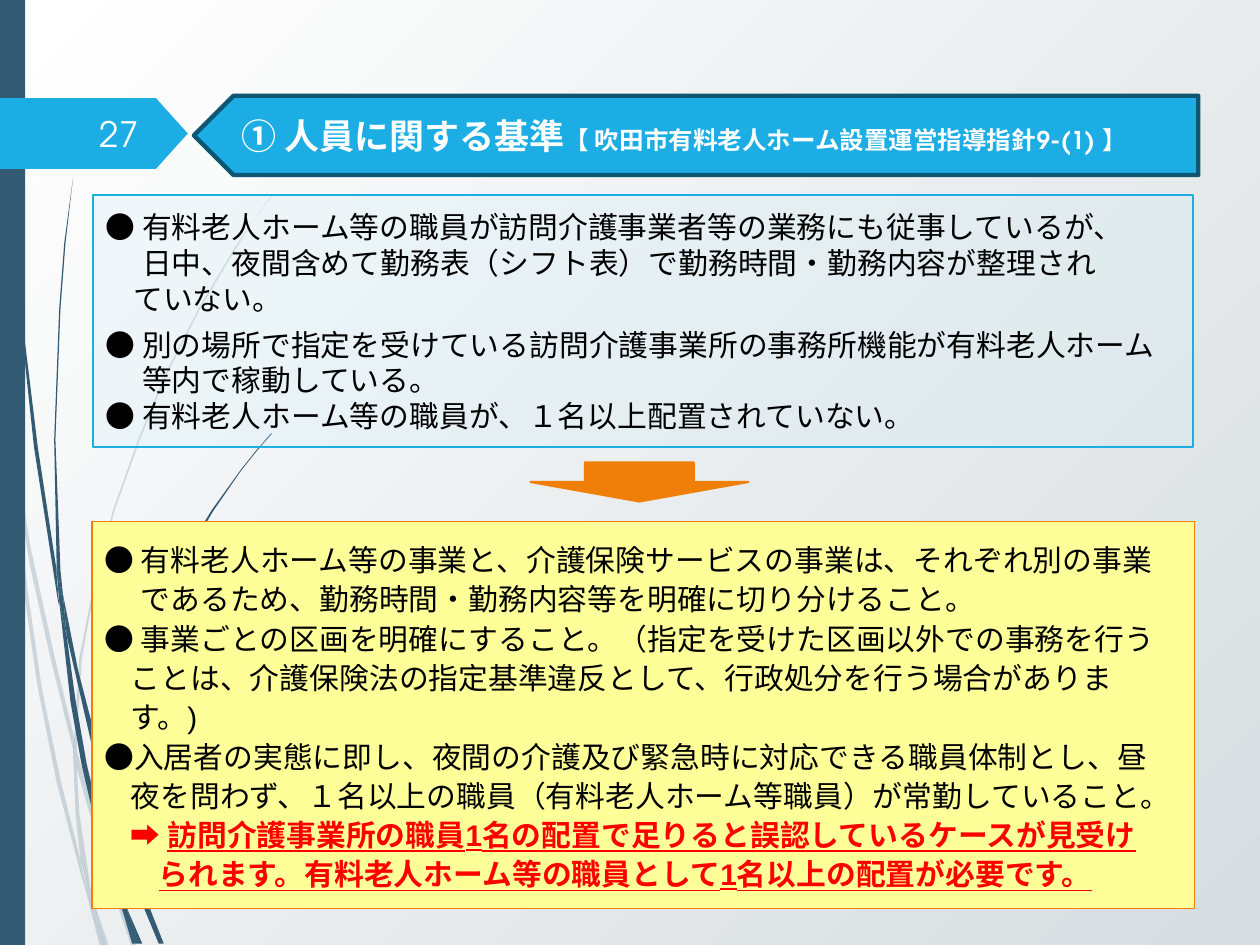
from lxml import etree
from pptx import Presentation
from pptx.dml.color import RGBColor
from pptx.enum.shapes import MSO_SHAPE
from pptx.enum.text import MSO_ANCHOR, PP_ALIGN
from pptx.oxml.ns import qn
from pptx.util import Inches, Pt

RECTANGLE = MSO_SHAPE.RECTANGLE
PENTAGON = MSO_SHAPE.PENTAGON
DOWN_ARROW = MSO_SHAPE.DOWN_ARROW
MIDDLE = MSO_ANCHOR.MIDDLE
LEFT, RIGHT = PP_ALIGN.LEFT, PP_ALIGN.RIGHT

COLUMNS, ROWS = 1000, 750
CELL = Inches(0.01)
JAPANESE_FONT = "Noto Sans CJK JP"
HEADING_FONT = "TeX Gyre Adventor"
BODY_FONT = "Arial"
COLORS = {
    "white": "FFFFFF", "mist": "D7DDE0", "slate": "335B74", "blue": "1CADE4",
    "navy": "0E5772", "ice": "D2EFFA", "orange": "F07F09", "yellow": "FFFF99",
    "black": "000000", "red": "FF0000", "number": "FEFFFF",
}

PALE_WISPS = [
    [(8, 350), (6, 322), (0, 282), (0, 299), (7, 344)],
    [(40, 522), (59, 599), (59, 586), (43, 520), (24, 433), (10, 345), (12, 376), (24, 450)],
    [(64, 607), (61, 596), (61, 610), (85, 694), (104, 750), (108, 750), (88, 692)],
    [(83, 750), (86, 750), (73, 711)],
    [(64, 683), (48, 619), (33, 545), (22, 469), (12, 376), (8, 350), (12, 410), (19, 470),
     (30, 546), (45, 621), (64, 693), (70, 714), (69, 707)],
    [(58, 599), (60, 646), (64, 683), (67, 692), (73, 711), (72, 706), (63, 646), (61, 610), (61, 608)],
    [(61, 584), (65, 522), (76, 462), (91, 405), (111, 349), (133, 296), (159, 245), (187, 198),
     (201, 175), (217, 154), (217, 153), (201, 175), (186, 197), (158, 244), (132, 295), (110, 348),
     (90, 404), (75, 461), (63, 522), (59, 584), (59, 586), (61, 596)],
    [(70, 714), (79, 750), (82, 750)],
    [(61, 608), (61, 610), (61, 596), (59, 586), (58, 599)],
    [(67, 692), (65, 683), (69, 707), (70, 714), (82, 750), (83, 750), (73, 711)],
]

DARK_WISPS = [
    [(5, 110), (14, 233), (27, 355), (46, 477), (47, 481), (45, 457), (45, 453), (30, 355),
     (15, 232), (6, 109), (4, 48), (3, 0), (2, 0), (3, 48)],
    [(73, 592), (88, 645), (88, 633), (88, 631), (77, 590), (62, 532), (50, 472), (53, 505)],
    [(94, 649), (91, 641), (91, 656), (109, 708), (126, 749), (130, 749), (113, 706)],
    [(91, 691), (81, 657), (69, 607), (60, 556), (53, 505), (47, 477), (56, 557), (65, 608),
     (77, 659), (92, 708), (97, 722), (96, 717)],
    [(50, 472), (48, 453), (44, 349), (48, 245), (52, 193), (58, 141), (51, 193), (47, 245),
     (43, 349), (45, 449), (49, 472)],
    [(110, 749), (113, 749), (100, 719)],
    [(47, 477), (53, 505), (50, 472), (49, 472), (45, 449), (45, 453)],
    [(91, 633), (95, 592), (103, 552), (115, 513), (131, 476), (149, 440), (169, 406), (191, 374),
     (203, 359), (216, 344), (215, 344), (203, 358), (191, 373), (168, 405), (147, 439), (129, 474),
     (113, 512), (101, 551), (92, 591), (88, 631), (91, 641)],
    [(97, 722), (105, 749), (108, 749)],
    [(88, 645), (91, 691), (96, 706), (100, 719), (100, 716), (91, 656), (90, 651)],
    [(96, 706), (91, 691), (96, 717), (97, 722), (108, 749), (110, 749), (100, 719)],
]

ISSUES = [
    (0, 0, "● 有料老人ホーム等の職員が訪問介護事業者等の業務にも従事しているが、"),
    (29, 0, "日中、夜間含めて勤務表（シフト表）で勤務時間・勤務内容が整理され"),
    (22, 6, "ていない。"),
    (0, 0, "● 別の場所で指定を受けている訪問介護事業所の事務所機能が有料老人ホーム"),
    (29, 0, "等内で稼動している。"),
    (0, 0, "● 有料老人ホーム等の職員が、１名以上配置されていない。"),
]

REQUIREMENTS = [
    (0, 0, "● 有料老人ホーム等の事業と、介護保険サービスの事業は、それぞれ別の事業"),
    (29, 0, "であるため、勤務時間・勤務内容等を明確に切り分けること。"),
    (0, 0, "● 事業ごとの区画を明確にすること。（指定を受けた区画以外での事務を行う"),
    (21, 0, "ことは、介護保険法の指定基準違反として、行政処分を行う場合がありま"),
    (21, 0, "す。)"),
    (0, 0, "●入居者の実態に即し、夜間の介護及び緊急時に対応できる職員体制とし、昼"),
    (21, 0, "夜を問わず、１名以上の職員（有料老人ホーム等職員）が常勤していること。"),
]

WARNINGS = [
    (21, "➡ ", "訪問介護事業所の職員1名の配置で足りると誤認しているケースが見受け"),
    (43, "", "られます。有料老人ホーム等の職員として1名以上の配置が必要です。"),
]


def rgb(name):
    return RGBColor.from_string(COLORS[name])


def paint(shape, fill, opacity=100, line=None, line_width=1):
    shape.shadow.inherit = False
    shape.fill.solid()
    shape.fill.fore_color.rgb = rgb(fill)
    if opacity < 100:
        color = shape.fill._xPr.find(qn("a:solidFill"))[0]
        etree.SubElement(color, qn("a:alpha")).set("val", str(opacity * 1000))
    if line:
        shape.line.color.rgb = rgb(line)
        shape.line.width = Pt(line_width)
    else:
        shape.line.fill.background()


def add_block(slide, kind, cells, fill, **style):
    shape = slide.shapes.add_shape(kind, *(CELL * cell for cell in cells))
    paint(shape, fill, **style)
    shape.text_frame.word_wrap = True
    shape.text_frame.vertical_anchor = MIDDLE
    return shape


def add_wisps(slide, outlines, opacity):
    for outline in outlines:
        builder = slide.shapes.build_freeform(*outline[0], scale=CELL)
        builder.add_line_segments(outline[1:], close=True)
        paint(builder.convert_to_shape(), "slate", opacity)


def add_paragraph(frame, indent=0, align=LEFT, before=0, after=0, spacing=1.0):
    first = frame.paragraphs[0]
    paragraph = frame.add_paragraph() if first.runs else first
    paragraph.alignment = align
    paragraph.space_before, paragraph.space_after = Pt(before), Pt(after)
    paragraph.line_spacing = spacing
    paragraph._p.get_or_add_pPr().set("marL", str(CELL * indent))
    return paragraph


def add_run(paragraph, text, size, font, color, bold=False, underline=False):
    run = paragraph.add_run()
    run.text = text
    run.font.size, run.font.name = Pt(size), font
    run.font.bold, run.font.underline = bold, underline
    run.font.color.rgb = rgb(color)
    east_asian = etree.SubElement(run.font._element, qn("a:ea"))
    east_asian.set("typeface", JAPANESE_FONT)


def add_lines(frame, lines, font, spacing):
    for indent, after, text in lines:
        paragraph = add_paragraph(frame, indent, after=after, spacing=spacing)
        add_run(paragraph, text, 17, font, "black")


def add_backdrop(slide):
    fill = slide.background.fill
    fill.gradient()
    fill.gradient_angle = 315
    for stop, name in zip(fill.gradient_stops, ("white", "mist")):
        stop.color.rgb = rgb(name)
    add_wisps(slide, PALE_WISPS, 20)
    add_wisps(slide, DARK_WISPS, 100)
    add_block(slide, RECTANGLE, (0, 0, 20, ROWS), "slate")


def add_page_number(slide):
    badge = add_block(slide, PENTAGON, (0, 78, 149, 56), "blue")
    badge.adjustments[0] = 0.45
    box = slide.shapes.add_textbox(*(CELL * cell for cell in (56, 86, 64, 40)))
    box.text_frame.word_wrap = True
    box.text_frame.vertical_anchor = MIDDLE
    add_run(add_paragraph(box.text_frame, align=RIGHT), "27", 20, HEADING_FONT, "number")


def add_title(slide):
    banner = add_block(slide, PENTAGON, (154, 76, 797, 63), "blue", line="navy", line_width=2.5)
    banner._element.spPr.find(qn("a:xfrm")).set("flipH", "1")
    paragraph = add_paragraph(banner.text_frame, 12, before=6)
    for text, size in (("① 人員に関する基準", 20), ("【 吹田市有料老人ホーム設置運営指導指針9-(1) 】", 14)):
        add_run(paragraph, text, size, HEADING_FONT, "white", bold=True)


def add_requirements(slide):
    panel = add_block(slide, RECTANGLE, (73, 414, 875, 307), "yellow", line="orange")
    add_lines(panel.text_frame, REQUIREMENTS, BODY_FONT, 1.1)
    for indent, marker, text in WARNINGS:
        paragraph = add_paragraph(panel.text_frame, indent, spacing=1.1)
        if marker:
            add_run(paragraph, marker, 17, BODY_FONT, "red", bold=True)
        add_run(paragraph, text, 17, BODY_FONT, "red", bold=True, underline=True)


def add_issues(slide):
    panel = add_block(slide, RECTANGLE, (74, 155, 873, 200), "ice", opacity=25, line="blue")
    add_lines(panel.text_frame, ISSUES, JAPANESE_FONT, 1.0)


def main():
    presentation = Presentation()
    presentation.slide_width, presentation.slide_height = CELL * COLUMNS, CELL * ROWS
    slide = presentation.slides.add_slide(presentation.slide_layouts[6])
    add_backdrop(slide)
    add_page_number(slide)
    add_requirements(slide)
    add_block(slide, DOWN_ARROW, (421, 367, 173, 31), "orange", line="orange", line_width=1.25)
    add_title(slide)
    add_issues(slide)
    presentation.save("out.pptx")


if __name__ == "__main__":
    main()
